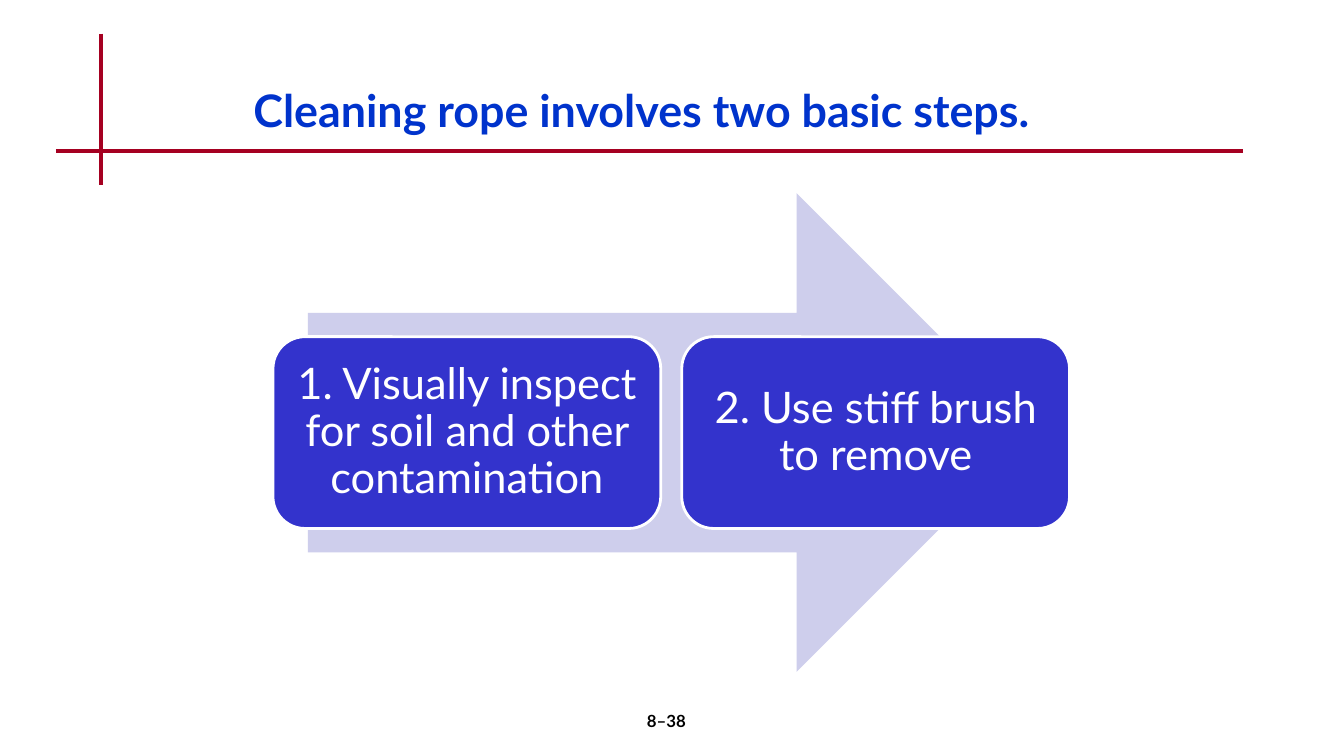
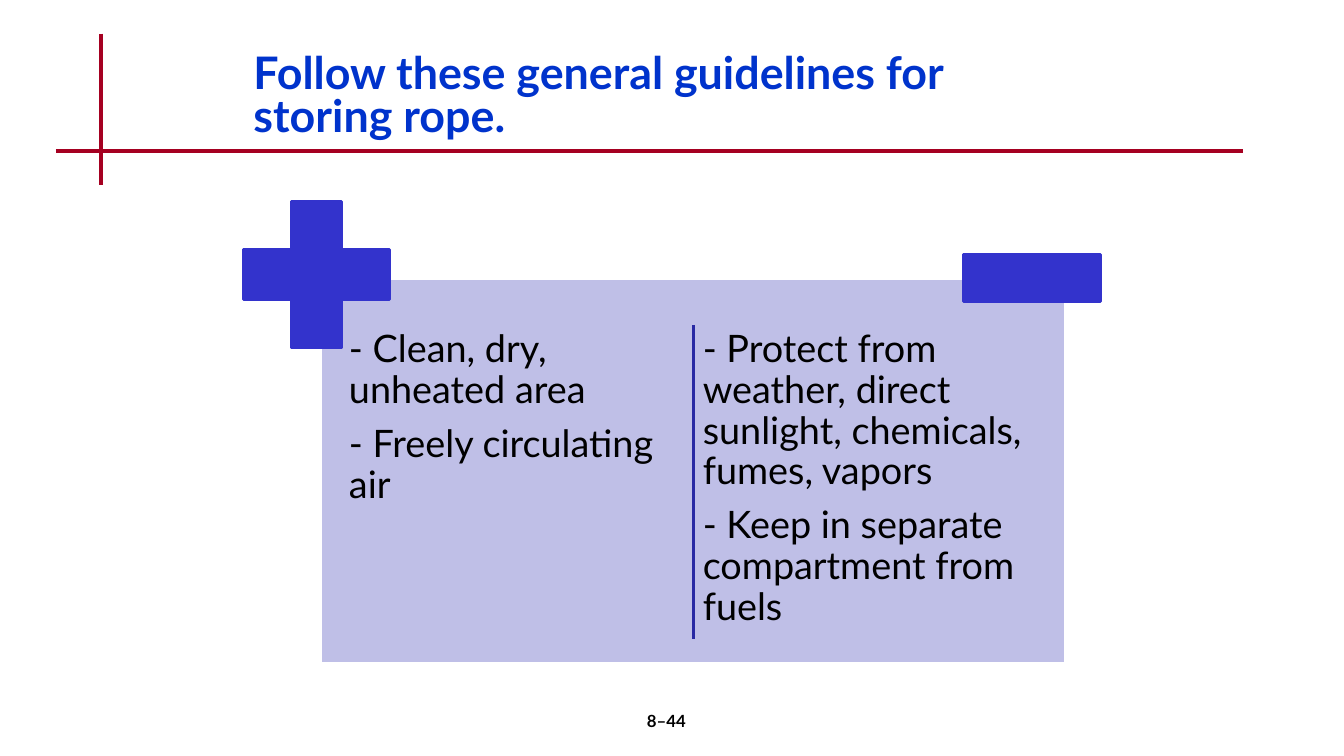
from dataclasses import dataclass
from typing import NamedTuple

from lxml.etree import SubElement
from pptx import Presentation
from pptx.dml.color import RGBColor
from pptx.enum.shapes import MSO_CONNECTOR, MSO_SHAPE
from pptx.enum.text import MSO_ANCHOR, PP_ALIGN
from pptx.oxml.ns import qn
from pptx.presentation import Presentation as Deck
from pptx.shapes.autoshape import Shape
from pptx.slide import Slide
from pptx.text.text import TextFrame
from pptx.util import Pt


@dataclass(frozen=True)
class Theme:
    font: str = "Lato"
    title: str = "0033CC"
    rule: str = "A50021"
    accent: str = "3333CC"
    divider: str = "2929A3"
    arrow: str = "CECEEC"
    panel: str = "BFBFE7"
    white: str = "FFFFFF"
    black: str = "000000"
    title_size: float = 32
    card_size: float = 31
    body_size: float = 27
    number_size: float = 12


class Box(NamedTuple):
    left: float
    top: float
    width: float
    height: float


class Line(NamedTuple):
    x1: float
    y1: float
    x2: float
    y2: float
    color: str
    weight: float


@dataclass(frozen=True)
class TextStyle:
    size: float
    color: str
    bold: bool = False
    align: PP_ALIGN = PP_ALIGN.LEFT
    spacing: float = 1.0
    after: float = 0


THEME = Theme()
TITLE = TextStyle(THEME.title_size, THEME.title, bold=True, spacing=0.8)
CARD = TextStyle(THEME.card_size, THEME.white, align=PP_ALIGN.CENTER, spacing=0.9)
BODY = TextStyle(THEME.body_size, THEME.black, spacing=0.9, after=9.3)
NUMBER = TextStyle(THEME.number_size, THEME.black, bold=True, align=PP_ALIGN.CENTER)

RULES = (
    Line(72, 24, 72, 132, THEME.rule, 3),
    Line(40, 108, 888, 108, THEME.rule, 3),
)


def write(tf: TextFrame, lines: list[str], style: TextStyle,
          inset_x: float = 7.2, inset_y: float = 3.6) -> None:
    tf.word_wrap = True
    tf.margin_left = tf.margin_right = Pt(inset_x)
    tf.margin_top = tf.margin_bottom = Pt(inset_y)
    tf.text = "\n".join(lines)
    for p in tf.paragraphs:
        p.alignment = style.align
        p.line_spacing = style.spacing
        p.space_after = Pt(style.after)
        for r in p.runs:
            r.font.name = THEME.font
            r.font.size = Pt(style.size)
            r.font.bold = style.bold
            r.font.color.rgb = RGBColor.from_string(style.color)


def add_text(s: Slide, box: Box, lines: list[str], style: TextStyle,
             inset_x: float = 7.2, inset_y: float = 3.6) -> None:
    tf = s.shapes.add_textbox(*map(Pt, box)).text_frame
    tf.vertical_anchor = MSO_ANCHOR.TOP
    write(tf, lines, style, inset_x, inset_y)


def add_block(s: Slide, kind: MSO_SHAPE, box: Box, fill: str,
              line: str | None = None) -> Shape:
    sp = s.shapes.add_shape(kind, *map(Pt, box))
    sp.shadow.inherit = False
    sp.fill.solid()
    sp.fill.fore_color.rgb = RGBColor.from_string(fill)
    if line:
        sp.line.color.rgb = RGBColor.from_string(line)
        sp.line.width = Pt(2)
    else:
        sp.line.fill.background()
    return sp


def add_line(s: Slide, line: Line) -> None:
    ends = map(Pt, (line.x1, line.y1, line.x2, line.y2))
    cx = s.shapes.add_connector(MSO_CONNECTOR.STRAIGHT, *ends)
    cx.line.color.rgb = RGBColor.from_string(line.color)
    cx.line.width = Pt(line.weight)
    SubElement(cx._element.spPr, qn("a:effectLst"))


def add_base(prs: Deck, title: str, title_box: Box, number: str) -> Slide:
    """Add a slide with the crossed rules, title and page number."""
    s = prs.slides.add_slide(prs.slide_layouts[6])
    for rule in RULES:
        add_line(s, rule)
    add_text(s, title_box, [title], TITLE)
    add_text(s, Box(376, 504, 200, 36), [number], NUMBER)
    return s


def build_cleaning(prs: Deck) -> None:
    s = add_base(prs, "Cleaning rope involves two basic steps.",
                 Box(174, 63, 648, 45), "8–38")
    add_block(s, MSO_SHAPE.RIGHT_ARROW, Box(220, 138, 520, 342), THEME.arrow)
    steps = (
        "1. Visually inspect for soil and other contamination",
        "2. Use stiff brush to remove",
    )
    width, gap = 277, 15
    for i, step in enumerate(steps):
        box = Box(195 + i * (width + gap), 240.5, width, 137)
        card = add_block(s, MSO_SHAPE.ROUNDED_RECTANGLE, box, THEME.accent, THEME.white)
        card.text_frame.vertical_anchor = MSO_ANCHOR.MIDDLE
        write(card.text_frame, [step], CARD, 9, 9)


def build_storing(prs: Deck) -> None:
    s = add_base(prs, "Follow these general guidelines for storing rope.",
                 Box(174, 36, 612, 72), "8–44")
    add_block(s, MSO_SHAPE.RECTANGLE, Box(229, 199, 532, 275), THEME.panel, THEME.white)
    columns = (
        ["- Clean, dry, unheated area", "- Freely circulating air"],
        ["- Protect from weather, direct sunlight, chemicals, fumes, vapors",
         "- Keep in separate compartment from fuels"],
    )
    width, gap = 247, 5.7
    for i, lines in enumerate(columns):
        box = Box(244.8 + i * (width + gap), 231, width, 235)
        add_text(s, box, lines, BODY, 4.5, 4.5)
    plus = add_block(s, MSO_SHAPE.CROSS, Box(174, 144, 104.5, 104.5),
                     THEME.accent, THEME.accent)
    plus.adjustments[0] = 0.33
    add_block(s, MSO_SHAPE.RECTANGLE, Box(688, 181.5, 98, 34), THEME.accent, THEME.accent)
    add_line(s, Line(495.4, 232, 495.4, 456.5, THEME.divider, 2))


def main() -> None:
    prs = Presentation()
    prs.slide_width, prs.slide_height = Pt(960), Pt(540)
    build_cleaning(prs)
    build_storing(prs)
    prs.save("out.pptx")


if __name__ == "__main__":
    main()
